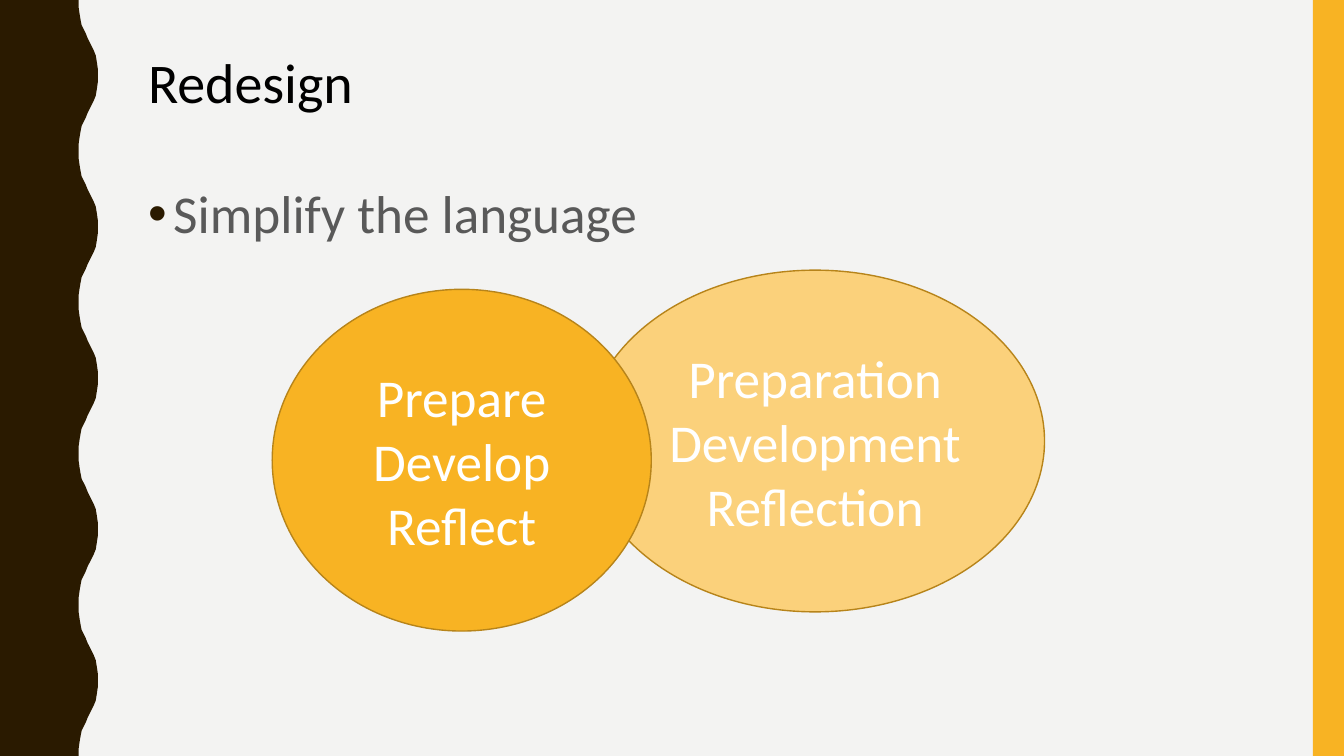
import pptx
import pptx.dml.color
import pptx.enum.shapes
import pptx.enum.text
import pptx.oxml
import pptx.oxml.ns
import pptx.util

Inches = pptx.util.Inches
Pt = pptx.util.Pt
SHAPES = pptx.enum.shapes.MSO_SHAPE
ALIGN = pptx.enum.text.PP_ALIGN
ANCHOR = pptx.enum.text.MSO_ANCHOR

WAVE_PERIOD = 1.5
WAVE_COUNT = 5
WAVE_RISE = [
    (0.78, 0), (0.78, 0.07), (0.79, 0.14), (0.8, 0.2), (0.81, 0.25),
    (0.83, 0.29), (0.85, 0.33), (0.87, 0.38), (0.89, 0.42), (0.91, 0.46),
    (0.93, 0.5), (0.95, 0.55), (0.96, 0.61), (0.97, 0.68), (0.97, 0.75),
]


def set_color(color_format, value):
    color_format.rgb = pptx.dml.color.RGBColor.from_string(value)


def set_fill(fill, value):
    fill.solid()
    set_color(fill.fore_color, value)


def set_attributes(target, values):
    for name, value in values.items():
        setattr(target, name, value)


def style_shape(shape, fill, line=None):
    shape.shadow.inherit = False
    set_fill(shape.fill, fill)
    if line:
        set_fill(shape.line.fill, line)
        shape.line.width = Pt(1)
    else:
        shape.line.fill.background()


def write_lines(text_frame, lines, size, color, frame_format, paragraph_format):
    set_attributes(text_frame, {"word_wrap": True, **frame_format})
    for index, line in enumerate(lines):
        paragraph = text_frame.paragraphs[0] if index == 0 else text_frame.add_paragraph()
        set_attributes(paragraph, paragraph_format)
        run = paragraph.add_run()
        run.text = line
        set_attributes(run.font, {"name": "Calibri", "size": Pt(size)})
        set_color(run.font.color, color)


def add_text(slide, box, text, size, color, paragraph_format):
    text_box = slide.shapes.add_textbox(*map(Inches, box))
    write_lines(text_box.text_frame, [text], size, color,
                {"vertical_anchor": ANCHOR.TOP}, paragraph_format)
    return text_box.text_frame.paragraphs[0]


def add_bullet(paragraph, color):
    properties = paragraph._p.get_or_add_pPr()
    properties.set("marL", str(Inches(0.25)))
    properties.set("indent", str(Inches(-0.25)))
    namespace = pptx.oxml.ns.nsdecls("a")
    for markup in (
        f'<a:buClr {namespace}><a:srgbClr val="{color}"/></a:buClr>',
        f'<a:buFont {namespace} typeface="Arial"/>',
        f'<a:buChar {namespace} char="•"/>',
    ):
        properties.append(pptx.oxml.parse_xml(markup))


def add_wave(slide, color):
    fall = [(x, WAVE_PERIOD - y) for x, y in reversed(WAVE_RISE[:-1])]
    edge = [
        (x, y + WAVE_PERIOD * wave)
        for wave in range(WAVE_COUNT)
        for x, y in WAVE_RISE + fall
    ]
    outline = edge + [(0, WAVE_PERIOD * WAVE_COUNT)]
    builder = slide.shapes.build_freeform(0, 0)
    builder.add_line_segments([(Inches(x), Inches(y)) for x, y in outline], close=True)
    style_shape(builder.convert_to_shape(), color)


def add_side_bar(slide, color):
    bar = slide.shapes.add_shape(
        SHAPES.RECTANGLE, Inches(13.02), 0, Inches(0.31), Inches(7.5))
    style_shape(bar, color)


def add_word_oval(slide, box, words, fill):
    oval = slide.shapes.add_shape(SHAPES.OVAL, *map(Inches, box))
    style_shape(oval, fill, "B7841A")
    write_lines(oval.text_frame, words, 38, "FFFFFF",
                {"vertical_anchor": ANCHOR.MIDDLE}, {"alignment": ALIGN.CENTER})


def main():
    presentation = pptx.Presentation()
    set_attributes(presentation, {"slide_width": Inches(13.33), "slide_height": Inches(7.5)})
    slide = presentation.slides.add_slide(presentation.slide_layouts[6])
    set_fill(slide.background.fill, "F3F3F2")

    add_wave(slide, "2A1A00")
    add_side_bar(slide, "F8B323")
    message = add_text(slide, (1.37, 1.68, 11.13, 5.41), "Simplify the language", 38,
                       "595959", {"line_spacing": 1.1, "space_before": Pt(7)})
    add_bullet(message, "2A1A00")
    add_text(slide, (1.37, 0.42, 11.13, 1.63), "Redesign", 40, "000000", {})
    add_word_oval(slide, (5.81, 2.68, 4.55, 3.39),
                  ["Preparation", "Development", "Reflection"], "FBD17B")
    add_word_oval(slide, (2.7, 2.87, 3.76, 3.39),
                  ["Prepare", "Develop", "Reflect"], "F8B323")

    presentation.save("out.pptx")


if __name__ == "__main__":
    main()
